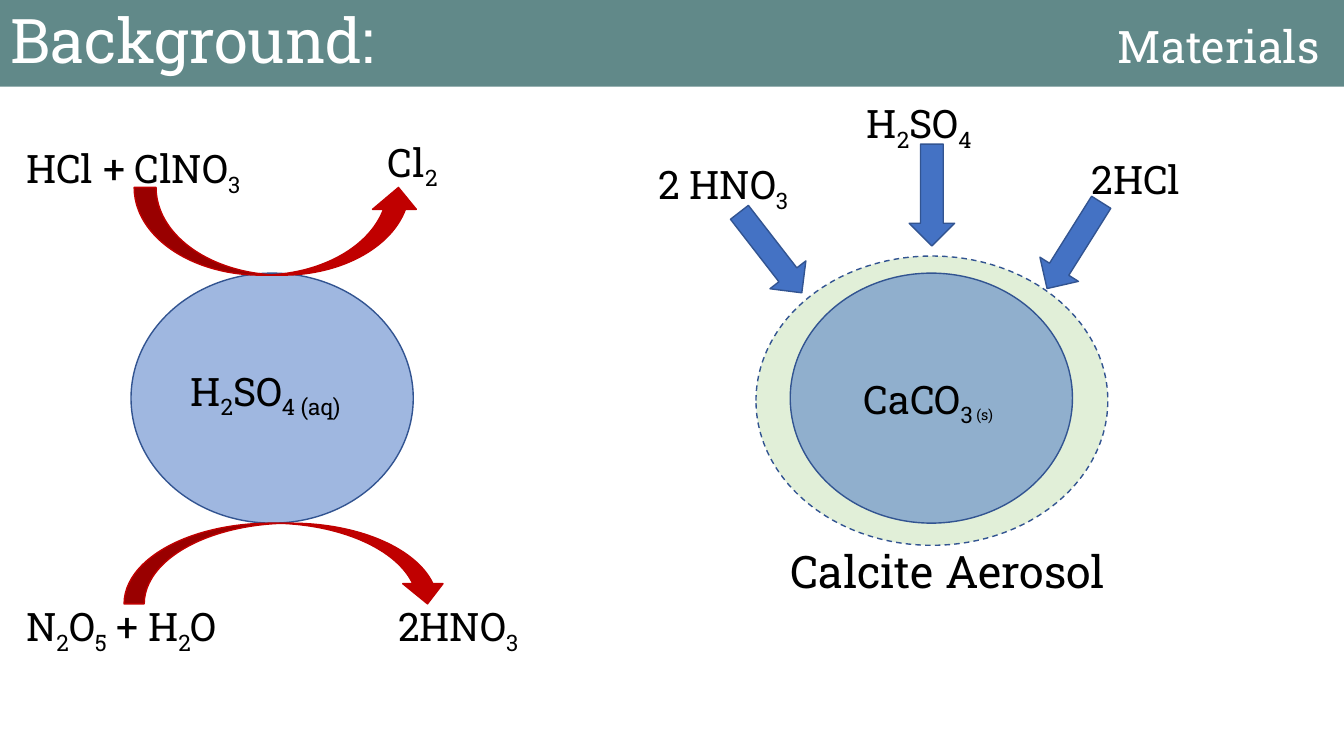
"""Builds the background slide on sulfuric acid and calcite aerosol reactions."""
from dataclasses import dataclass
from lxml.etree import SubElement
from pptx import Presentation
from pptx.dml.color import RGBColor
from pptx.enum.dml import MSO_LINE
from pptx.enum.shapes import MSO_SHAPE
from pptx.enum.text import MSO_ANCHOR, MSO_AUTO_SIZE, PP_ALIGN
from pptx.oxml.ns import qn
from pptx.util import Inches, Pt


@dataclass(frozen=True)
class Theme:
    font: str = "Roboto Slab"
    band: str = "004242"
    blue: str = "4472C4"
    outline: str = "325491"
    green: str = "C5E0B4"
    red: str = "C00000"
    white: str = "FFFFFF"
    black: str = "000000"
    title: int = 44
    heading: int = 32
    formula: int = 28
    state: int = 18


theme = Theme()
deck = Presentation()
deck.slide_width, deck.slide_height = Inches(13.333), Inches(7.5)
slide = deck.slides.add_slide(deck.slide_layouts[5])
col, row = deck.slide_width / 100, deck.slide_height / 100


def add_run(paragraph, text, size, color, subscript=False):
    run = paragraph.add_run()
    run.text = text
    run.font.name, run.font.size = theme.font, Pt(size)
    run.font.color.rgb = RGBColor.from_string(color)
    if subscript:
        run._r.get_or_add_rPr().set("baseline", "-25000")


def paint(part, fill, line=None, opacity=100):
    part.fill.solid()
    part.fill.fore_color.rgb = RGBColor.from_string(fill)
    if opacity < 100:
        tint = part._element.spPr.find(qn("a:solidFill"))[0]
        SubElement(tint, qn("a:alpha")).set("val", str(opacity * 1000))
    if line:
        part.shadow.inherit = False
        part.line.color.rgb = RGBColor.from_string(line)
        part.line.width = Pt(1)


band = slide.shapes.title
band.left, band.top = 0, 0
band.width, band.height = deck.slide_width, round(11.47 * row)
paint(band, theme.band, opacity=62)
band.text_frame.auto_size = MSO_AUTO_SIZE.NONE
band.text_frame.vertical_anchor = MSO_ANCHOR.MIDDLE
heading = band.text_frame.paragraphs[0]
heading.alignment, heading.line_spacing = PP_ALIGN.LEFT, 0.9
tab_stops = SubElement(heading._p.get_or_add_pPr(), qn("a:tabLst"))
SubElement(tab_stops, qn("a:tab"), pos=str(Inches(10.99)), algn="l")
add_run(heading, "Background:\t", theme.title, theme.white)
add_run(heading, "Materials", theme.heading, theme.white)

for left, top, width, height, fill, dash in [
    (56.25, 33.87, 26.18, 38.27, theme.green, MSO_LINE.DASH),
    (58.8, 36.13, 21, 33.07, theme.blue, None),
    (9.75, 36.13, 21, 33.07, theme.blue, None),
]:
    particle = slide.shapes.add_shape(
        MSO_SHAPE.OVAL, round(left * col), round(top * row), round(width * col), round(height * row))
    paint(particle, fill, theme.outline, opacity=51)
    if dash:
        particle.line.dash_style = dash

for left, top, width, formula, size, state in [
    (58.05, 71.2, 30.75, "Calcite Aerosol", theme.heading, ""),
    (63.53, 48.93, 19.8, "CaCO_3", theme.formula, " (s)"),
    (48.23, 20.53, 12.38, "2 HNO_3", theme.formula, ""),
    (63.75, 12.53, 12.38, "H_2_SO_4", theme.formula, ""),
    (80.48, 19.87, 12.38, "2HCl", theme.formula, ""),
    (13.43, 47.87, 15.45, "H_2_SO_4 (aq)", theme.formula, ""),
    (1.2, 18.4, 21.38, "HCl + ClNO_3", theme.formula, ""),
    (1.2, 79.07, 21.38, "N_2_O_5_ + H_2_O", theme.formula, ""),
    (28.88, 79.07, 21.38, "2HNO_3", theme.formula, ""),
    (28.13, 17.6, 21.38, "Cl_2", theme.formula, ""),
]:
    label = slide.shapes.add_textbox(
        round(left * col), round(top * row), round(width * col), round(size * 0.27 * row))
    label.text_frame.word_wrap = True
    species = label.text_frame.paragraphs[0]
    for index, piece in enumerate(formula.split("_")):
        add_run(species, piece, size, theme.black, subscript=index % 2 == 1)
    if state:
        add_run(species, state, theme.state, theme.black, subscript=True)

for preset, left, top, width, height, angle, fill, line in [
    (MSO_SHAPE.DOWN_ARROW, 55.65, 26.67, 3.38, 13.47, 322.2, theme.blue, theme.outline),
    (MSO_SHAPE.DOWN_ARROW, 67.65, 19.07, 3.38, 13.47, 0, theme.blue, theme.outline),
    (MSO_SHAPE.DOWN_ARROW, 78.23, 25.73, 3.38, 13.47, 32.1, theme.blue, theme.outline),
    (MSO_SHAPE.CURVED_UP_ARROW, 9.98, 24.8, 21.3, 11.6, 0, theme.red, theme.red),
    (MSO_SHAPE.CURVED_DOWN_ARROW, 9.23, 69.2, 24.08, 10.67, 0, theme.red, theme.red),
]:
    reaction = slide.shapes.add_shape(
        preset, round(left * col), round(top * row), round(width * col), round(height * row))
    reaction.rotation = angle
    paint(reaction, fill, line)

deck.save("out.pptx")
